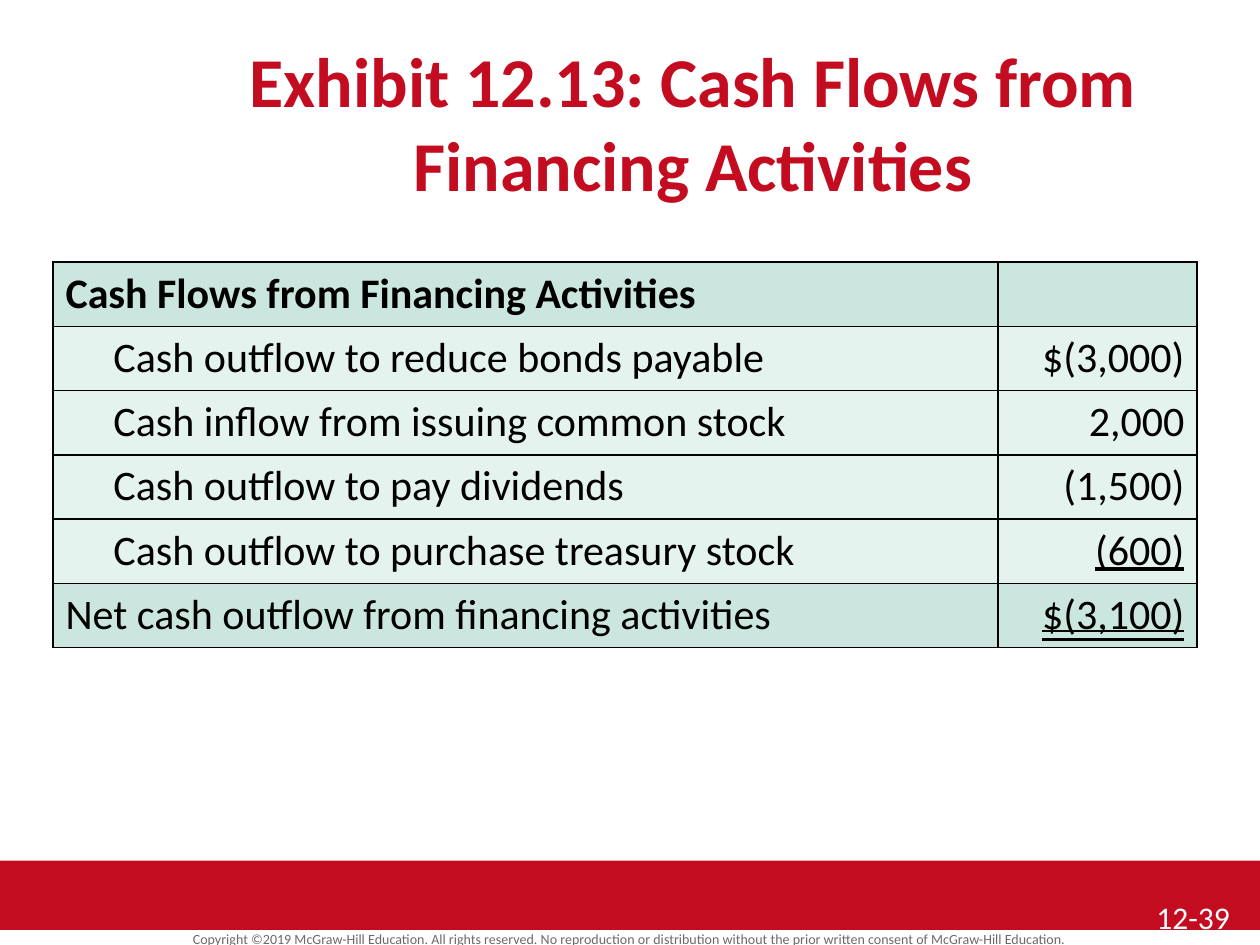
from lxml.etree import SubElement
from pptx import Presentation
from pptx.dml.color import RGBColor
from pptx.enum.shapes import MSO_SHAPE as Shape
from pptx.enum.text import MSO_ANCHOR as Anchor, MSO_UNDERLINE as Underline, PP_ALIGN as Align
from pptx.oxml.ns import qn
from pptx.util import Inches, Pt

# Content
TITLE = "Exhibit 12.13: Cash Flows from Financing Activities"
COPYRIGHT = ("Copyright ©2019 McGraw-Hill Education. All rights reserved. No reproduction "
             "or distribution without the prior written consent of McGraw-Hill Education.")
PAGE_NUMBER = "12-39"
# label, amount, row kind, underline of the amount
ROWS = [
    ("Cash Flows from Financing Activities", "", "heading", None),
    ("Cash outflow to reduce bonds payable", "$(3,000)", "item", None),
    ("Cash inflow from issuing common stock", "2,000", "item", None),
    ("Cash outflow to pay dividends", "(1,500)", "item", None),
    ("Cash outflow to purchase treasury stock", "(600)", "item", Underline.SINGLE_LINE),
    ("Net cash outflow from financing activities", "$(3,100)", "total", Underline.DOUBLE_LINE),
]

# Format
COLORS = {"red": "C30C20", "gray": "6A6A6A", "white": "FFFFFF", "black": "000000",
          "heading": "CAE6DE", "item": "E4F3EE", "total": "CAE6DE"}
FONT = "Calibri"
WIDTH, HEIGHT = 10, 7.5
TABLE_LEFT, TABLE_TOP = 0.42, 2.08
COLUMNS = (7.5, 1.58)
ROW_HEIGHT = 0.51
CELL_MARGIN, ITEM_INDENT = 0.1, 0.38


def color(name):
    return RGBColor.from_string(COLORS[name])


def write(frame, text, size, ink="black", bold=False, underline=None,
          align=Align.LEFT, spacing=None):
    paragraph = frame.paragraphs[0]
    paragraph.alignment = align
    paragraph.line_spacing = spacing
    run = paragraph.add_run()
    run.text = text
    font = run.font
    font.name, font.size, font.bold, font.underline = FONT, Pt(size), bold, underline
    font.color.rgb = color(ink)


def add_text(slide, left, top, width, height, text, **style):
    box = slide.shapes.add_textbox(*map(Inches, (left, top, width, height)))
    box.text_frame.word_wrap = True
    write(box.text_frame, text, **style)


def fill_cell(cell, kind):
    cell.vertical_anchor = Anchor.TOP
    properties = cell._tc.get_or_add_tcPr()
    for side in ("lnL", "lnR", "lnT", "lnB"):
        line = SubElement(properties, qn(f"a:{side}"), w=str(Pt(1)))
        ink = SubElement(line, qn("a:solidFill"))
        SubElement(ink, qn("a:srgbClr"), val=COLORS["black"])
    cell.fill.solid()
    cell.fill.fore_color.rgb = color(kind)


def add_statement(slide):
    table = slide.shapes.add_table(
        len(ROWS), len(COLUMNS), Inches(TABLE_LEFT), Inches(TABLE_TOP),
        Inches(sum(COLUMNS)), Inches(ROW_HEIGHT * len(ROWS))).table
    for column, width in zip(table.columns, COLUMNS):
        column.width = Inches(width)
    for row, (label, amount, kind, underline) in zip(table.rows, ROWS):
        row.height = Inches(ROW_HEIGHT)
        label_cell, amount_cell = row.cells
        for cell in row.cells:
            fill_cell(cell, kind)
        if kind == "item":
            label_cell.margin_left = Inches(CELL_MARGIN + ITEM_INDENT)
        write(label_cell.text_frame, label, 24, bold=kind == "heading")
        write(amount_cell.text_frame, amount, 24, underline=underline, align=Align.RIGHT)


def main():
    presentation = Presentation()
    presentation.slide_width, presentation.slide_height = Inches(WIDTH), Inches(HEIGHT)
    slide = presentation.slides.add_slide(presentation.slide_layouts[6])

    # Footer band and copyright line
    band = slide.shapes.add_shape(Shape.RECTANGLE, 0, Inches(6.83), Inches(WIDTH), Inches(0.55))
    band.shadow.inherit = False
    band.fill.solid()
    band.fill.fore_color.rgb = color("red")
    band.line.fill.background()
    add_text(slide, 0, 7.36, WIDTH, 0.19, COPYRIGHT, size=8, ink="gray",
             align=Align.CENTER, spacing=0.8)

    # Title and page number
    add_text(slide, 1, 0.25, 9, 0.67, TITLE, size=40, ink="red", bold=True, align=Align.CENTER)
    add_text(slide, 9.08, 7.08, 0.92, 0.42, PAGE_NUMBER, size=18, ink="white")

    # Cash flow table
    add_statement(slide)
    presentation.save("out.pptx")


if __name__ == "__main__":
    main()
